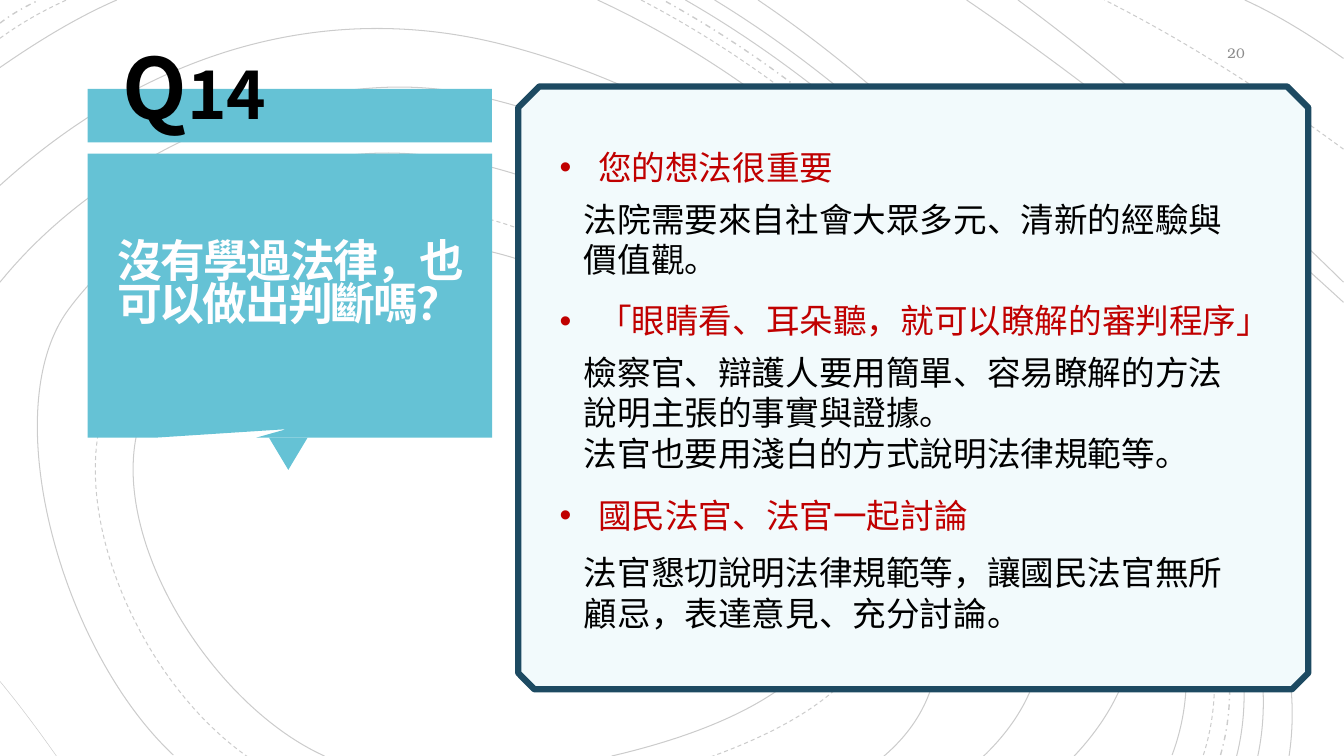
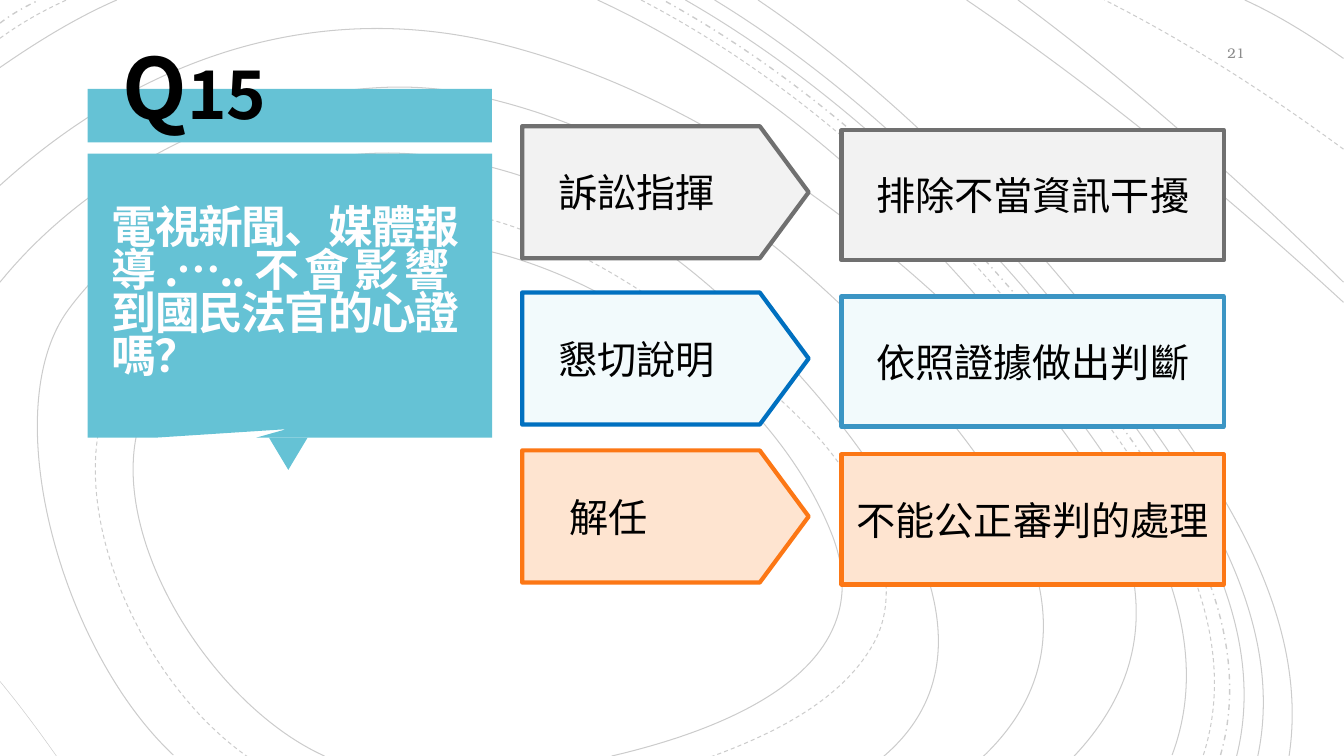
import copy

import pptx
import pptx.dml.color
import pptx.enum.dml
import pptx.enum.shapes
import pptx.enum.text
import pptx.oxml.ns
import pptx.util

Cm = pptx.util.Cm
Pt = pptx.util.Pt
SHAPE = pptx.enum.shapes.MSO_SHAPE
ALIGN = pptx.enum.text.PP_ALIGN
ANCHOR = pptx.enum.text.MSO_ANCHOR
FIT = pptx.enum.text.MSO_AUTO_SIZE
DASH = pptx.enum.dml.MSO_LINE
qn = pptx.oxml.ns.qn

COLOURS = {
    "black": "000000", "white": "FFFEFF", "teal": "65C2D5", "ice": "F2FAFC",
    "navy": "1D4A62", "red": "C00000", "number": "8C8C8C",
    "pale grey": "F2F2F2", "grey": "707070", "blue": "0070C0",
    "sky": "3B95C4", "peach": "FEE4D0", "orange": "FC7715",
}
SANS, SERIF = "Noto Sans CJK SC", "TeX Gyre Bonum"

TITLE_FONT = {"size": Pt(32), "bold": True}
TITLE_FRAME = {
    "word_wrap": True, "auto_size": FIT.NONE, "vertical_anchor": ANCHOR.BOTTOM,
    "margin_left": Cm(0.64), "margin_right": Cm(0.64),
    "margin_top": Cm(0.64), "margin_bottom": 0,
}
BODY_FRAME = {"word_wrap": True, "auto_size": FIT.NONE, "vertical_anchor": ANCHOR.TOP}

# Background curves, counted in steps of 0.0254 cm
CURVE_STEP = Cm(0.0254)
SLIDE_RIGHT = 1333
LINE_STYLES = {
    "solid": {"width": Pt(0.75), "dash_style": DASH.SOLID},
    "hair": {"width": Pt(0.38), "dash_style": DASH.SOLID},
    "dash": {"width": Pt(0.75), "dash_style": DASH.DASH},
    "dot": {"width": Pt(1), "dash_style": DASH.DASH_DOT},
}
# Start, first handle, then the incoming handle and node of each segment
LOOPS = [
    ("solid", [(876, 751), (1025, 625), (835, 409), (738, 315), (536, 164), (412, 153),
               (141, 208), (68, 307), (60, 644), (172, 749)]),
    ("solid", [(607, 750), (710, 726), (880, 667), (825, 529), (615, 278), (480, 248),
               (216, 281), (151, 391), (200, 695), (322, 750)]),
    ("dash", [(705, 751), (765, 729), (835, 696), (867, 638), (864, 495), (817, 440),
              (592, 227), (443, 209), (193, 267), (122, 368), (127, 668), (246, 751)]),
    ("solid", [(975, 751), (1130, 604), (950, 413), (838, 306), (603, 120), (458, 92),
               (111, 143), (0, 280)]),
    ("solid", [(1065, 751), (1213, 595), (1067, 422), (944, 307), (667, 87), (498, 44),
               (152, 46), (0, 184)]),
]
# Bundle of lines spread between an inner and an outer one
INNER = [(1163, 749), (1226, 581), (1064, 401), (963, 287), (736, 66), (593, 0)]
OUTER = [(1279, 750), (1303, 590), (1182, 438), (1090, 322), (881, 87), (752, 0)]
BUNDLE = [("solid", 0), ("dash", 0.27), ("dot", 0.41), ("solid", 0.55),
          ("solid", 0.73), ("solid", 1)]
# Corner arcs: where they meet the top and the nearer side
CORNERS = [("solid", 116, 67), ("dash", 66, 38), ("dot", 39, 23), ("solid", 959, 300),
           ("solid", 1010, 280), ("dash", 1096, 148), ("solid", 1235, 58)]

# Answers: heading or not, space before in points, text
OPINIONS = [
    (True, 0, "您的想法很重要"),
    (False, 8, "法院需要來自社會大眾多元、清新的經驗與\n價值觀。"),
    (True, 15, "「眼睛看、耳朵聽，就可以瞭解的審判程序」"),
    (False, 8, "檢察官、辯護人要用簡單、容易瞭解的方法\n說明主張的事實與證據。"),
    (False, 0, "法官也要用淺白的方式說明法律規範等。"),
    (True, 16, "國民法官、法官一起討論"),
    (False, 12, "法官懇切說明法律規範等，讓國民法官無所\n顧忌，表達意見、充分討論。"),
]

# Measures: top, text inset, texts, fill, line colours
MEASURES = [
    (3.18, 0.91, ("訴訟指揮", "排除不當資訊干擾"), "pale grey", ("grey", "grey")),
    (7.37, 0.91, ("懇切說明", "依照證據做出判斷"), "ice", ("blue", "sky")),
    (11.35, 1.19, ("解任", "不能公正審判的處理"), "peach", ("orange", "orange")),
]


def colour(name):
    return pptx.dml.color.RGBColor.from_string(COLOURS[name])


def set_values(target, values):
    for name, value in values.items():
        setattr(target, name, value)


def place(shape, box):
    set_values(shape, dict(zip(("left", "top", "width", "height"), map(Cm, box))))


def write(paragraph, text, colour_name, font_values, typeface=SANS, spacing=None):
    """Add text, with a line break at each newline, in one format."""
    for index, line in enumerate(text.split("\n")):
        if index:
            paragraph.add_line_break()
        run = paragraph.add_run()
        run.text = line
        set_values(run.font, {"name": typeface, **font_values})
        run.font.color.rgb = colour(colour_name)
        properties = run.font._element
        latin = properties.find(qn("a:latin"))
        east_asian = copy.deepcopy(latin)
        east_asian.tag = qn("a:ea")
        latin.addnext(east_asian)
        if spacing is not None:
            properties.set("spc", str(spacing))
    for line_break in paragraph._p.findall(qn("a:br")):
        line_break.append(copy.deepcopy(properties))


def add_block(slide, kind, box, fill, line=None, line_width=3, adjustments=()):
    shape = slide.shapes.add_shape(kind, *map(Cm, box))
    shape.shadow.inherit = False
    shape.fill.solid()
    shape.fill.fore_color.rgb = colour(fill)
    if line:
        shape.line.color.rgb = colour(line)
        shape.line.width = Pt(line_width)
    else:
        shape.line.fill.background()
    for index, value in enumerate(adjustments):
        shape.adjustments[index] = value
    return shape


def between(first, second, share):
    return tuple(round(a + (b - a) * share) for a, b in zip(first, second))


def smooth(points):
    """Give each inner node an outgoing handle that mirrors the incoming one."""
    result = list(points[:2])
    for handle, node in zip(points[2::2], points[3::2]):
        result += [handle, node, between(handle, node, 2)]
    return result[:-1]


def arc(start, end):
    """Bezier points of a slightly raised line."""
    rise = abs(end[0] - start[0]) * 0.04
    handles = [between(start, end, share) for share in (1 / 3, 2 / 3)]
    return [start, *((x, round(y - rise)) for x, y in handles), end]


def background_curves():
    for style, points in LOOPS:
        yield style, smooth(points)
    for style, share in BUNDLE:
        yield style, smooth([between(a, b, share) for a, b in zip(INNER, OUTER)])
    for style, top_x, side_y in CORNERS:
        side_x = SLIDE_RIGHT if top_x > SLIDE_RIGHT / 2 else 0
        yield style, arc((side_x, side_y), (top_x, 0))
    yield "hair", arc((0, 676), (56, 750))


def add_curves(presentation, slide):
    """Draw the background curves and move them to the slide master."""
    master_tree = presentation.slide_master.shapes.element
    for index, (style, points) in enumerate(background_curves()):
        builder = slide.shapes.build_freeform(*points[0], scale=CURVE_STEP)
        builder.add_line_segments(points[1:], close=False)
        shape = builder.convert_to_shape()
        shape.shadow.inherit = False
        shape.fill.background()
        set_values(shape.line, LINE_STYLES[style])
        shape.line.color.rgb = colour("black")
        # Faint line
        line_colour = shape.element.xpath(".//a:ln//a:srgbClr")[0]
        line_colour.append(line_colour.makeelement(qn("a:alpha"), {"val": "20000"}))
        # Every three points make one Bezier segment
        segments = shape.element.xpath(".//a:lnTo")
        for first, second, third in zip(segments[::3], segments[1::3], segments[2::3]):
            first.tag = qn("a:cubicBezTo")
            for segment in (second, third):
                first.append(segment[0])
                segment.getparent().remove(segment)
        shape.element.xpath(".//p:cNvPr")[0].set("id", str(100 + index))
        master_tree.insert(2 + index, shape.element)


def add_question(slide, box, number, text, title_offset):
    """Question band, callout with the title, and the number over the band."""
    left, top, width, height = box
    add_block(slide, SHAPE.RECTANGULAR_CALLOUT, (left, top + 1.63, width, height - 1.63),
              "teal", adjustments=(-0.008, 0.47))
    add_block(slide, SHAPE.RECTANGLE, (left, top, width, 1.35), "teal")
    pointer = add_block(slide, SHAPE.ISOSCELES_TRIANGLE,
                        (left + 4.57, top + height, 0.97, 0.81), "teal")
    pointer.rotation = 180

    # Title, in front of the callout
    title = slide.shapes.title
    slide.shapes.element.append(title.element)
    place(title, (left + title_offset[0], top + title_offset[1], 9.98, 4.85))
    set_values(title.text_frame, TITLE_FRAME)
    paragraph = title.text_frame.paragraphs[0]
    set_values(paragraph, {"alignment": ALIGN.JUSTIFY, "line_spacing": 0.8})
    write(paragraph, text, "white", TITLE_FONT, spacing=-150)

    # Question number
    label = slide.shapes.add_textbox(*map(Cm, (left + 0.63, top - 1.48, 4.29, 2.82)))
    label.text_frame.word_wrap = False
    for part, size in (("Q", 60), (number, 48)):
        write(label.text_frame.paragraphs[0], part, "black", {"size": Pt(size), "bold": True})


def add_page_number(slide, box, number):
    frame = slide.shapes.add_textbox(*map(Cm, box)).text_frame
    set_values(frame, {"word_wrap": True, "vertical_anchor": ANCHOR.MIDDLE})
    frame.paragraphs[0].alignment = ALIGN.RIGHT
    write(frame.paragraphs[0], number, "number", {"size": Pt(10)}, SERIF)


def add_opinions(slide, box):
    """Snipped panel with headings and their explanations."""
    left, top, width, height = box
    add_block(slide, SHAPE.SNIP_2_SAME_RECTANGLE, box, "ice", "navy", 4.5, (0.035, 0.027))
    body = slide.placeholders[1]
    slide.shapes.element.append(body.element)
    place(body, (left + 0.79, top + 1.4, width - 1.2, height - 2))
    frame = body.text_frame
    set_values(frame, BODY_FRAME)
    for index, (is_heading, space, text) in enumerate(OPINIONS):
        paragraph = frame.add_paragraph() if index else frame.paragraphs[0]
        properties = paragraph._p.get_or_add_pPr()
        margin, indent = (0.97, -0.97) if is_heading else (0.61, 0)
        properties.set("marL", str(Cm(margin)))
        properties.set("indent", str(Cm(indent)))
        tag, attributes = ("a:buChar", {"char": "•"}) if is_heading else ("a:buNone", {})
        properties.append(properties.makeelement(qn(tag), attributes))
        paragraph.space_before = Pt(space)
        write(paragraph, text, "red" if is_heading else "black", {"size": Pt(24)})


def add_measure(slide, box, inset, texts, fill, lines):
    """One row: an arrow on the left and its result on the right."""
    left, top, width, height = box
    arrow = add_block(slide, SHAPE.PENTAGON, (left, top, 7.22, height), fill, lines[0],
                      adjustments=(0.37,))
    card = add_block(slide, SHAPE.RECTANGLE, (left + 8.05, top + 0.1, width - 8.05, height - 0.05),
                     fill, lines[1])
    arrow.text_frame.margin_left = Cm(inset)
    for shape, text, alignment in zip((arrow, card), texts, (ALIGN.LEFT, ALIGN.CENTER)):
        set_values(shape.text_frame, {"word_wrap": True, "vertical_anchor": ANCHOR.MIDDLE})
        shape.text_frame.paragraphs[0].alignment = alignment
        write(shape.text_frame.paragraphs[0], text, "black", {"size": Pt(28)})


def main():
    presentation = pptx.Presentation()
    set_values(presentation, {"slide_width": Cm(33.87), "slide_height": Cm(19.05)})
    question_box = (2.21, 2.24, 10.19, 8.79)
    number_box = (29.08, 0.89, 2.54, 0.89)

    # Question 14
    slide = presentation.slides.add_slide(presentation.slide_layouts[1])
    add_curves(presentation, slide)
    add_opinions(slide, (13.06, 2.18, 19.91, 15.19))
    add_question(slide, question_box, "14", "沒有學過法律，也可以做出判斷嗎？", (0.1, 1.21))
    add_page_number(slide, number_box, "20")

    # Question 15
    slide = presentation.slides.add_slide(presentation.slide_layouts[5])
    add_question(slide, question_box, "15",
                 "電視新聞、媒體報導.…..不會影響\n到國民法官的心證嗎？", (-0.03, 2.51))
    for top, *content in MEASURES:
        add_measure(slide, (13.16, top, 17.68, 3.33), *content)
    add_page_number(slide, number_box, "21")

    presentation.save("out.pptx")


if __name__ == "__main__":
    main()
